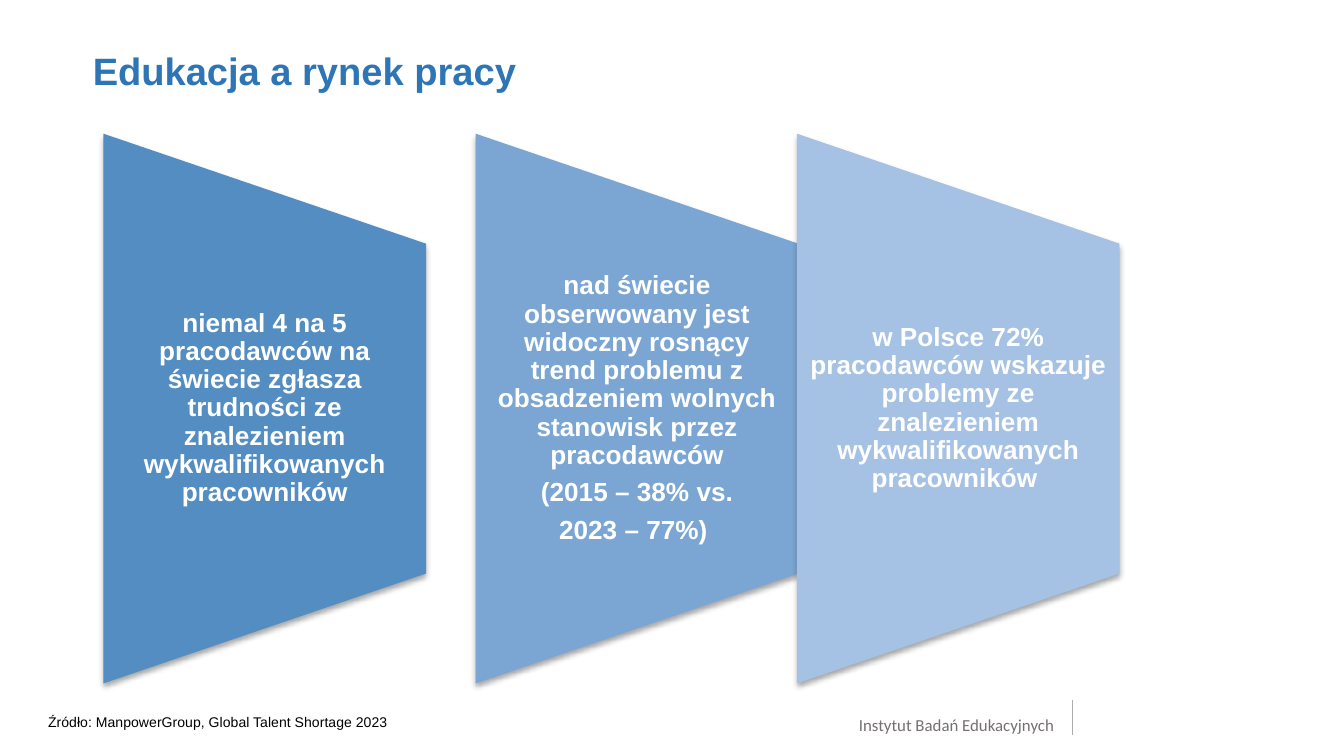
from dataclasses import dataclass

from lxml import etree
from pptx import Presentation
from pptx.dml.color import RGBColor
from pptx.enum.shapes import MSO_CONNECTOR, MSO_SHAPE
from pptx.enum.text import MSO_ANCHOR, PP_ALIGN
from pptx.oxml import parse_xml
from pptx.oxml.ns import nsdecls, qn
from pptx.util import Inches, Pt

TRAPEZOID = MSO_SHAPE.FLOWCHART_MANUAL_OPERATION
STRAIGHT = MSO_CONNECTOR.STRAIGHT
TOP, MIDDLE = MSO_ANCHOR.TOP, MSO_ANCHOR.MIDDLE
LEFT, CENTER, RIGHT = PP_ALIGN.LEFT, PP_ALIGN.CENTER, PP_ALIGN.RIGHT


@dataclass(frozen=True)
class Theme:
    heading: str = "2E75B6"
    panel_text: str = "FFFFFF"
    source: str = "000000"
    footer: str = "757070"
    rule: str = "AEABAB"
    panels: tuple = ("538DC1", "7BA6D3", "A5C1E3")
    font: str = "Arial"
    footer_font: str = "Calibri"
    heading_size: float = 20.4
    panel_size: float = 14
    footer_size: float = 9
    source_size: float = 7.5


theme = Theme()

SHADOW = (
    f'<a:effectLst {nsdecls("a")}>'
    '<a:outerShdw blurRad="40000" dist="23000" dir="5400000" rotWithShape="0">'
    '<a:srgbClr val="000000"><a:alpha val="35000"/></a:srgbClr>'
    "</a:outerShdw></a:effectLst>"
)


def add_text(box, lines, size, color, font=theme.font, bold=False,
             align=LEFT, anchor=TOP, inset=(0, 0)):
    area = slide.shapes.add_textbox(*[Inches(v) for v in box])
    frame = area.text_frame
    frame.word_wrap = True
    frame.vertical_anchor = anchor
    frame.margin_left = frame.margin_right = Inches(inset[0])
    frame.margin_top = frame.margin_bottom = Inches(inset[1])
    frame.text = "\n".join(lines)
    for paragraph in frame.paragraphs:
        paragraph.alignment = align
        paragraph.font.name = font
        paragraph.font.size = Pt(size)
        paragraph.font.bold = bold
        paragraph.font.color.rgb = RGBColor.from_string(color)
    return frame


presentation = Presentation()
presentation.slide_width = Inches(10)
presentation.slide_height = Inches(10) * 9 // 16
slide = presentation.slides.add_slide(presentation.slide_layouts[6])

add_text((6.17, 5.32, 1.67, 0.14), ["Instytut Badań Edukacyjnych"],
         theme.footer_size, theme.footer, theme.footer_font, align=RIGHT)

footer_rule = slide.shapes.add_connector(
    STRAIGHT, Inches(7.98), Inches(5.47), Inches(7.98), Inches(5.21))
footer_rule.line.color.rgb = RGBColor.from_string(theme.rule)
footer_rule.line.width = Pt(0.75)
etree.SubElement(footer_rule._element.spPr, qn("a:effectLst"))

add_text((0.69, 0.35, 8.62, 0.58), ["Edukacja a rynek pracy"],
         theme.heading_size, theme.heading, bold=True)

panel_width, panel_height, panel_middle = 2.4, 4.09, 3.04
text_height = 2.46
panels = [
    (0.77, ["niemal 4 na 5 pracodawców na świecie zgłasza trudności ze "
            "znalezieniem wykwalifikowanych pracowników"]),
    (3.54, ["nad świecie obserwowany jest widoczny rosnący trend problemu z "
            "obsadzeniem wolnych stanowisk przez pracodawców",
            "(2015 – 38% vs.", "2023 – 77%) "]),
    (5.93, ["w Polsce 72% pracodawców wskazuje problemy ze znalezieniem "
            "wykwalifikowanych pracowników "]),
]
for (left, lines), color in zip(panels, theme.panels):
    panel = slide.shapes.add_shape(
        TRAPEZOID,
        Inches(left + (panel_width - panel_height) / 2),
        Inches(panel_middle - panel_width / 2),
        Inches(panel_height), Inches(panel_width))
    panel.rotation = 270
    panel.fill.solid()
    panel.fill.fore_color.rgb = RGBColor.from_string(color)
    panel.line.fill.background()
    panel._element.spPr.append(parse_xml(SHADOW))

    message = add_text(
        (left, panel_middle - text_height / 2, panel_width, text_height), lines,
        theme.panel_size, theme.panel_text, bold=True,
        align=CENTER, anchor=MIDDLE, inset=(0.1, 0))
    for paragraph in message.paragraphs:
        paragraph.line_spacing = 0.9
        paragraph.space_after = Pt(0.35 * theme.panel_size)

add_text((0.26, 5.26, 7.17, 0.23),
         ["Źródło: ManpowerGroup, Global Talent Shortage 2023"],
         theme.source_size, theme.source, inset=(0.1, 0.05))

presentation.save("out.pptx")
